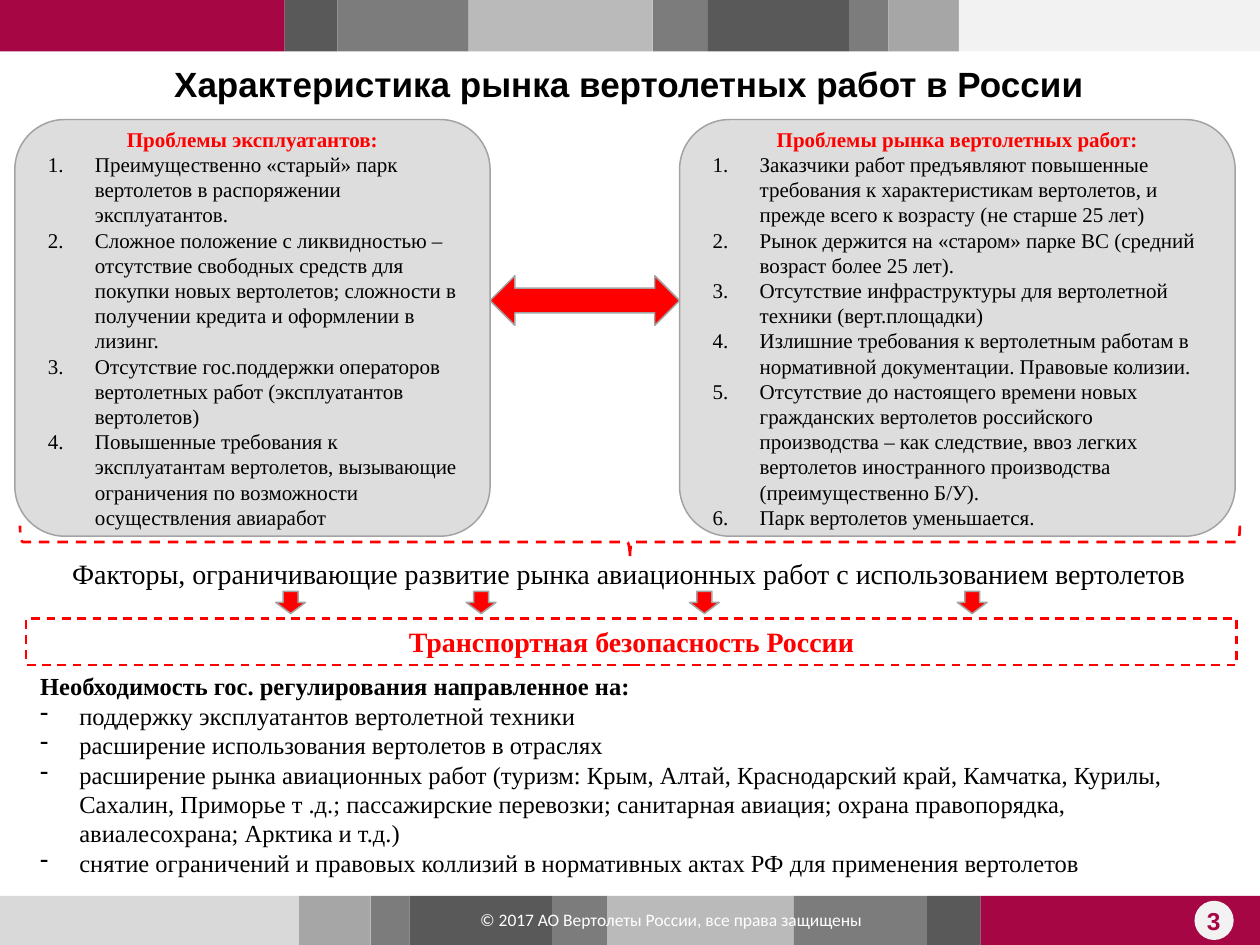
from itertools import pairwise
from lxml.etree import SubElement
from pptx import Presentation
from pptx.dml.color import RGBColor
from pptx.enum.dml import MSO_LINE
from pptx.enum.shapes import MSO_SHAPE
from pptx.enum.text import MSO_ANCHOR, MSO_AUTO_SIZE, PP_ALIGN
from pptx.oxml.ns import qn
from pptx.util import Cm, Pt

COLORS = dict(crimson="A60643", dark="595959", mid="7C7C7C", soft="BABABA",
              grey="A6A6A6", pale="D9D9D9", light="F2F2F2", panel="DDDDDD",
              edge="A3A3A3", red="FF0000", black="000000", white="FFFFFF")

TITLE = "Характеристика рынка вертолетных работ в России"
PANELS = [
    dict(left=0.3, width=9.58, head="Проблемы эксплуатантов:", items=[
        "Преимущественно «старый» парк вертолетов в распоряжении эксплуатантов.",
        "Сложное положение с ликвидностью – отсутствие свободных средств для покупки новых вертолетов; сложности в получении кредита и оформлении в лизинг.",
        "Отсутствие гос.поддержки операторов вертолетных работ (эксплуатантов вертолетов)",
        "Повышенные требования к эксплуатантам вертолетов, вызывающие ограничения по возможности осуществления авиаработ",
    ]),
    dict(left=13.7, width=11.2, head="Проблемы рынка вертолетных работ:", items=[
        "Заказчики работ предъявляют повышенные требования к характеристикам вертолетов, и прежде всего к возрасту (не старше 25 лет)",
        "Рынок держится на «старом» парке ВС (средний возраст более 25 лет).",
        "Отсутствие инфраструктуры для вертолетной техники (верт.площадки)",
        "Излишние требования к вертолетным работам в нормативной документации. Правовые колизии.",
        "Отсутствие до настоящего времени новых гражданских вертолетов российского производства – как следствие, ввоз легких вертолетов иностранного производства (преимущественно Б/У).",
        "Парк вертолетов уменьшается.",
    ]),
]
FACTORS = "Факторы, ограничивающие развитие рынка авиационных работ с использованием вертолетов"
SAFETY = "Транспортная безопасность России"
NEED = "Необходимость гос. регулирования направленное на:"
MEASURES = [
    "поддержку эксплуатантов вертолетной техники",
    "расширение использования вертолетов в отраслях",
    "расширение рынка авиационных работ (туризм: Крым, Алтай, Краснодарский край, Камчатка, Курилы, Сахалин, Приморье т .д.; пассажирские перевозки; санитарная авиация; охрана правопорядка, авиалесохрана; Арктика и т.д.)",
    "снятие ограничений и правовых коллизий в нормативных актах РФ для применения вертолетов",
]
COPYRIGHT = "© 2017 АО Вертолеты России, все права защищены"

STRIPS = [
    dict(top=0, height=1.04,
         edges=[0, 5.74, 6.81, 9.45, 13.16, 14.27, 17.12, 17.91, 19.33, 25.4],
         fills="crimson dark mid soft mid dark mid grey light".split()),
    dict(top=18.06, height=0.99,
         edges=[0, 6.03, 7.47, 8.26, 11.13, 12.24, 16, 18.69, 19.77, 25.4],
         fills="pale grey mid dark mid soft mid dark crimson".split()),
]
DOWN_ARROWS = [5.56, 9.4, 13.9, 19.3]

HEAD = dict(size=Pt(12), name="Times New Roman", color="red", bold=True)
ITEM = HEAD | dict(color="black", bold=False)
FACTOR = ITEM | dict(size=Pt(16))
SAFE = HEAD | dict(size=Pt(16))
MEASURE = ITEM | dict(size=Pt(14))
NEED_FONT = MEASURE | dict(bold=True)
TITLE_FONT = dict(size=Pt(20), name="Arial", color="black", bold=True)
PAGE_FONT = TITLE_FONT | dict(size=Pt(14), color="crimson")
COPY_FONT = dict(size=Pt(10), name="Calibri", color="white", bold=False)
NUMBERED = ("a:buAutoNum", dict(type="arabicPeriod"), 0.95)
DASHED = ("a:buChar", dict(char="-"), 0.79)


def rgb(name):
    return RGBColor.from_string(COLORS[name])


def set_line(sp, color, width, dash=None):
    sp.line.color.rgb = rgb(color)
    sp.line.width = Pt(width)
    if dash:
        sp.line.dash_style = dash


def add_shape(s, kind, box, fill=None, line=None):
    sp = s.shapes.add_shape(kind, *map(Cm, box))
    sp.shadow.inherit = False
    if fill:
        sp.fill.solid()
        sp.fill.fore_color.rgb = rgb(fill)
    else:
        sp.fill.background()
    if line:
        set_line(sp, *line)
    else:
        sp.line.fill.background()
    return sp


def write(tf, rows, **frame):
    settings = dict(word_wrap=True, auto_size=MSO_AUTO_SIZE.NONE,
                    vertical_anchor=MSO_ANCHOR.TOP) | frame
    for key, value in settings.items():
        setattr(tf, key, value)
    for i, (text, font, align, bullet) in enumerate(rows):
        p = tf.paragraphs[0] if i == 0 else tf.add_paragraph()
        p.alignment = align
        if bullet:
            tag, attrs, indent = bullet
            pPr = p._p.get_or_add_pPr()
            pPr.set("marL", str(Cm(indent)))
            pPr.set("indent", str(-Cm(indent)))
            SubElement(pPr, qn(tag), attrs)
        r = p.add_run()
        r.text = text
        for key, value in font.items():
            if key == "color":
                r.font.color.rgb = rgb(value)
            else:
                setattr(r.font, key, value)


def centred(text, font):
    return [(text, font, PP_ALIGN.CENTER, None)]


def listed(items, font, bullet):
    return [(text, font, PP_ALIGN.LEFT, bullet) for text in items]


def add_text(s, box, rows):
    sp = s.shapes.add_textbox(*map(Cm, box))
    write(sp.text_frame, rows)
    return sp


def main():
    prs = Presentation()
    prs.slide_width, prs.slide_height = Cm(25.4), Cm(19.05)
    s = prs.slides.add_slide(prs.slide_layouts[5])

    for strip in STRIPS:
        for (x, end), fill in zip(pairwise(strip["edges"]), strip["fills"]):
            add_shape(s, MSO_SHAPE.RECTANGLE,
                      (x, strip["top"], end - x, strip["height"]), fill)
    add_shape(s, MSO_SHAPE.OVAL, (24.08, 18.16, 0.79, 0.79), "light")

    title = s.shapes.title
    title.left, title.top, title.width, title.height = map(Cm, (0.48, 1.22, 24.4, 0.94))
    write(title.text_frame, centred(TITLE, TITLE_FONT), vertical_anchor=MSO_ANCHOR.MIDDLE,
          margin_left=0, margin_right=0, margin_top=0, margin_bottom=0)
    add_text(s, (23.93, 18.14, 1.07, 0.9), centred("3", PAGE_FONT))
    add_text(s, (8.51, 18.21, 10.03, 0.74), centred(COPYRIGHT, COPY_FONT))

    edge = ("edge", 0.85)
    for panel in PANELS:
        sp = add_shape(s, MSO_SHAPE.ROUNDED_RECTANGLE,
                       (panel["left"], 2.41, panel["width"], 8.4), "panel", edge)
        sp.adjustments[0] = 0.12
        write(sp.text_frame,
              centred(panel["head"], HEAD) + listed(panel["items"], ITEM, NUMBERED),
              vertical_anchor=MSO_ANCHOR.MIDDLE, margin_left=Cm(0.37), margin_right=Cm(0.37))

    gap_start = PANELS[0]["left"] + PANELS[0]["width"]
    add_shape(s, MSO_SHAPE.LEFT_RIGHT_ARROW,
              (gap_start, 5.56, PANELS[1]["left"] - gap_start, 1), "red", edge)

    safety = add_text(s, (0.53, 12.47, 24.4, 0.94), centred(SAFETY, SAFE))
    set_line(safety, "red", 1.25, MSO_LINE.DASH)
    factors = add_text(s, (0.48, 11.1, 24.4, 0.94), centred(FACTORS, FACTOR))
    factors.fill.solid()
    factors.fill.fore_color.rgb = rgb("white")

    for x in DOWN_ARROWS:
        add_shape(s, MSO_SHAPE.DOWN_ARROW, (x, 11.92, 0.6, 0.45), "red", edge)

    brace = add_shape(s, MSO_SHAPE.LEFT_BRACE, (12.37, -1.37, 0.66, 24.59),
                      line=("red", 1.5, MSO_LINE.DASH))
    brace.rotation = 270

    add_text(s, (0.56, 13.41, 24.43, 4.45),
             listed([NEED], NEED_FONT, None) + listed(MEASURES, MEASURE, DASHED))
    prs.save("out.pptx")


if __name__ == "__main__":
    main()
